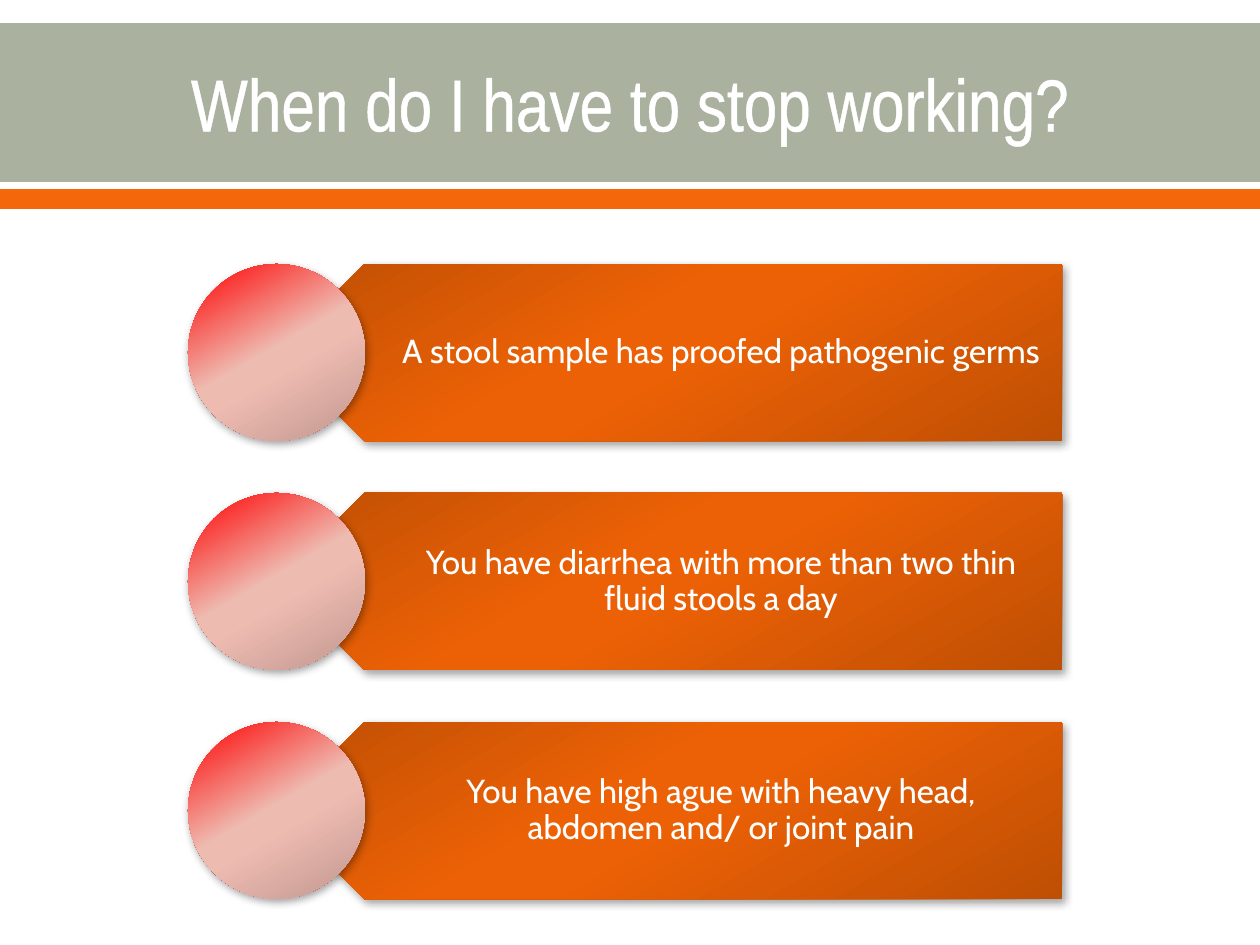
from lxml import etree
from pptx import Presentation
from pptx.dml.color import RGBColor
from pptx.enum.shapes import MSO_SHAPE
from pptx.enum.text import MSO_ANCHOR, PP_ALIGN
from pptx.oxml import parse_xml
from pptx.util import Pt

RECT = MSO_SHAPE.RECTANGLE
ARROW = MSO_SHAPE.PENTAGON
DISC = MSO_SHAPE.FLOWCHART_SUMMING_JUNCTION
MIDDLE = MSO_ANCHOR.MIDDLE
CENTER = PP_ALIGN.CENTER

SCALE = 914400 / 126
NS = 'xmlns:a="http://schemas.openxmlformats.org/drawingml/2006/main"'
WHITE = "FFFFFF"
ORANGE = [(0, "BF4F04"), (48, "EC6105"), (58, "EC6105"), (100, "BF4F04")]
RED = [(0, "FF0000"), (48, "EEBBB1"), (58, "EEBBB1"), (100, "C0978F")]
TITLE = {"name": "Arial Narrow", "size": Pt(42)}
BODY = {"name": "Cabin", "size": Pt(19)}
REASONS = [
    "A stool sample has proofed pathogenic germs",
    "You have diarrhea with more than two thin fluid stools a day",
    "You have high ague with heavy head, abdomen and/ or joint pain",
]


def px(n):
    return round(n * SCALE)


def color(code):
    return RGBColor.from_string(code)


def add_form(slide, kind, box):
    form = slide.shapes.add_shape(kind, *map(px, box))
    form.shadow.inherit = False
    form.line.fill.background()
    return form


def add_bar(slide, box, code):
    bar = add_form(slide, RECT, box)
    bar.fill.solid()
    bar.fill.fore_color.rgb = color(code)


def add_glow(slide, kind, box, stops):
    """Shape with a slanted gradient and a soft shadow."""
    form = add_form(slide, kind, box)
    marks = "".join(
        f'<a:gs pos="{pos * 1000}"><a:srgbClr val="{code}"/></a:gs>'
        for pos, code in stops)
    fill = parse_xml(
        f'<a:gradFill {NS} rotWithShape="1"><a:gsLst>{marks}</a:gsLst>'
        '<a:lin ang="3600000" scaled="0"/></a:gradFill>')
    form.fill.background()
    props = form.fill._xPr
    old = props.find("{*}noFill")
    props.replace(old, fill)
    shade = etree.SubElement(props.find("{*}effectLst"), fill.tag.replace("gradFill", "outerShdw"))
    for key, val in {"blurRad": Pt(5), "dist": Pt(2), "dir": 3600000, "rotWithShape": 0}.items():
        shade.set(key, str(val))
    shade.append(parse_xml(
        f'<a:srgbClr {NS} val="000000"><a:alpha val="36000"/></a:srgbClr>'))
    return form


def add_text(slide, box, words, style, insets):
    label = slide.shapes.add_textbox(*map(px, box))
    frame = label.text_frame
    frame.word_wrap = True
    frame.vertical_anchor = MIDDLE
    for side, gap in zip(("left", "top", "right", "bottom"), insets):
        setattr(frame, f"margin_{side}", px(gap))
    para = frame.paragraphs[0]
    para.alignment = CENTER
    run = para.add_run()
    run.text = words
    for key, val in style.items():
        setattr(run.font, key, val)
    run.font.color.rgb = color(WHITE)
    return para


def add_header(slide, x, y, w):
    add_bar(slide, (x, y, w, 159), "ABB19F")
    add_bar(slide, (x, y + 166, w, 20), "F4680B")
    para = add_text(slide, (x + 63, y + 2, w - 126, 154),
                    "When do I have to stop working?", TITLE, (13, 6, 13, 6))
    # White outline around the letters
    para.runs[0].font._element.insert(0, parse_xml(
        f'<a:ln {NS} w="{Pt(1.1)}"><a:solidFill><a:srgbClr val="{WHITE}"/>'
        '</a:solidFill></a:ln>'))


def add_reason(slide, x, y, w, h, words):
    half = h // 2
    arrow = add_glow(slide, ARROW, (x + half, y, w - half, h), ORANGE)
    arrow.rotation = 180
    para = add_text(slide, (x + 133, y, w - 133, h), words, BODY, (78, 10, 19, 10))
    para.line_spacing = 0.9
    add_glow(slide, DISC, (x, y, h, h), RED)


def main():
    deck = Presentation()
    deck.slide_width, deck.slide_height = px(1260), px(945)
    slide = deck.slides.add_slide(deck.slide_layouts[6])
    add_header(slide, 0, 23, 1260)
    # Three reasons at equal steps
    for row, words in enumerate(REASONS):
        add_reason(slide, 188, 264 + 229 * row, 874, 177, words)
    deck.save("out.pptx")


if __name__ == "__main__":
    main()
